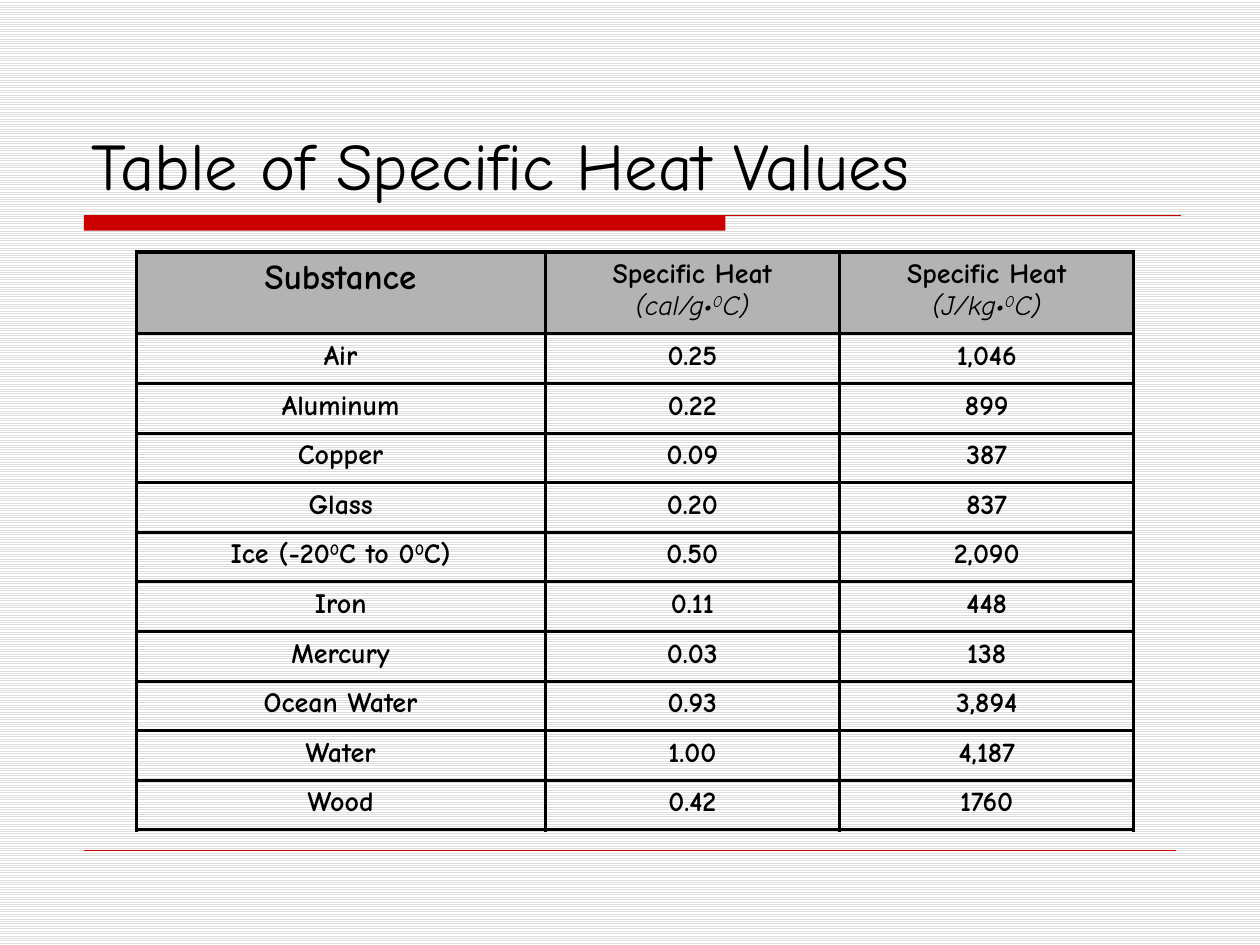
from dataclasses import dataclass

from lxml.etree import SubElement
from pptx import Presentation
from pptx.dml.color import RGBColor
from pptx.enum.dml import MSO_PATTERN
from pptx.enum.shapes import MSO_CONNECTOR, MSO_SHAPE
from pptx.enum.text import MSO_ANCHOR, PP_ALIGN
from pptx.oxml.ns import qn
from pptx.util import Inches, Pt

BLACK = RGBColor(0x00, 0x00, 0x00)
WHITE = RGBColor(0xFF, 0xFF, 0xFF)
RED = RGBColor(0xCC, 0x00, 0x00)
HEADER_GREY = RGBColor(0xB3, 0xB3, 0xB3)
STRIPE_GREY = RGBColor(0xDD, 0xDD, 0xDD)
FONT = "Comic Neue"
SLIDE_WIDTH = Inches(10)
SLIDE_HEIGHT = Inches(7.5)
MARGIN = 1 / 15
COLUMN_SHARES = (0.41, 0.295, 0.295)
BORDER_SIDES = ("a:lnL", "a:lnR", "a:lnT", "a:lnB")


@dataclass(frozen=True)
class Line:
    text: str
    size: float = 16
    bold: bool = True
    italic: bool = False


@dataclass(frozen=True)
class Rule:
    right: float
    height: float
    weight: float


HEADERS = (
    (Line("Substance", size=20),),
    (Line("Specific Heat"), Line("(cal/g•^0^C)", bold=False, italic=True)),
    (Line("Specific Heat"), Line("(J/kg•^0^C)", bold=False, italic=True)),
)
SUBSTANCES = (
    ("Air", "0.25", "1,046"),
    ("Aluminum", "0.22", "899"),
    ("Copper", "0.09", "387"),
    ("Glass", "0.20", "837"),
    ("Ice (-20^0^C to 0^0^C)", "0.50", "2,090"),
    ("Iron", "0.11", "448"),
    ("Mercury", "0.03", "138"),
    ("Ocean Water", "0.93", "3,894"),
    ("Water", "1.00", "4,187"),
    ("Wood", "0.42", "1760"),
)
RULES = (Rule(0.937, 0.228, 0.75), Rule(0.933, 0.9, 0.25))


def across(share: float) -> int:
    return round(SLIDE_WIDTH * share)


def down(share: float) -> int:
    return round(SLIDE_HEIGHT * share)


def write_line(para, line: Line, align) -> None:
    para.alignment = align
    for index, part in enumerate(line.text.split("^")):
        span = para.add_run()
        span.text = part
        span.font.name = FONT
        span.font.size = Pt(line.size)
        span.font.bold = line.bold
        span.font.italic = line.italic
        span.font.color.rgb = BLACK
        if index % 2:
            span.font._element.set("baseline", "30000")


def draw_title(page) -> None:
    box = page.shapes.add_textbox(across(0.063), down(0.044), across(0.875), down(0.178))
    box.text_frame.word_wrap = True
    box.text_frame.vertical_anchor = MSO_ANCHOR.BOTTOM
    title = Line("Table of Specific Heat Values", size=38, bold=False)
    write_line(box.text_frame.paragraphs[0], title, PP_ALIGN.LEFT)


def draw_bar(page) -> None:
    bar = page.shapes.add_shape(
        MSO_SHAPE.RECTANGLE, across(MARGIN), down(0.228), across(0.509), down(0.016)
    )
    bar.shadow.inherit = False
    bar.fill.solid()
    bar.fill.fore_color.rgb = RED
    bar.line.fill.background()


def draw_rule(page, rule: Rule) -> None:
    connector = page.shapes.add_connector(
        MSO_CONNECTOR.STRAIGHT,
        across(MARGIN), down(rule.height), across(rule.right), down(rule.height),
    )
    connector.line.color.rgb = RED
    connector.line.width = Pt(rule.weight)
    SubElement(connector._element.spPr, qn("a:effectLst"))


def add_borders(cell) -> None:
    properties = cell._tc.get_or_add_tcPr()
    for side in BORDER_SIDES:
        border = SubElement(properties, qn(side), w=str(Pt(2)))
        fill = SubElement(border, qn("a:solidFill"))
        SubElement(fill, qn("a:srgbClr"), val=str(BLACK))


def fill_cell(cell, lines: tuple[Line, ...], is_header: bool) -> None:
    add_borders(cell)
    if is_header:
        cell.fill.solid()
        cell.fill.fore_color.rgb = HEADER_GREY
    else:
        cell.fill.background()
    frame = cell.text_frame
    for index, line in enumerate(lines):
        para = frame.add_paragraph() if index else frame.paragraphs[0]
        write_line(para, line, PP_ALIGN.CENTER)


def draw_table(page) -> None:
    body = tuple(tuple((Line(text),) for text in row) for row in SUBSTANCES)
    rows = (HEADERS, *body)
    width, height = Inches(7.92), Inches(4.59)
    header_height = Inches(0.65)
    table = page.shapes.add_table(
        len(rows), len(HEADERS), across(0.108), down(4 / 15), width, height
    ).table
    table.first_row = False
    table.horz_banding = False
    for column, share in zip(table.columns, COLUMN_SHARES):
        column.width = round(width * share)
    for index, row in enumerate(rows):
        is_header = index == 0
        body_height = (height - header_height) // len(body)
        table.rows[index].height = header_height if is_header else body_height
        for cell, lines in zip(table.rows[index].cells, row):
            fill_cell(cell, lines, is_header)


def main() -> None:
    deck = Presentation()
    deck.slide_width, deck.slide_height = SLIDE_WIDTH, SLIDE_HEIGHT
    page = deck.slides.add_slide(deck.slide_layouts[6])
    backdrop = page.background.fill
    backdrop.patterned()
    backdrop.pattern = MSO_PATTERN.LIGHT_HORIZONTAL
    backdrop.fore_color.rgb = STRIPE_GREY
    backdrop.back_color.rgb = WHITE
    draw_bar(page)
    for rule in RULES:
        draw_rule(page, rule)
    draw_title(page)
    draw_table(page)
    deck.save("out.pptx")


if __name__ == "__main__":
    main()
